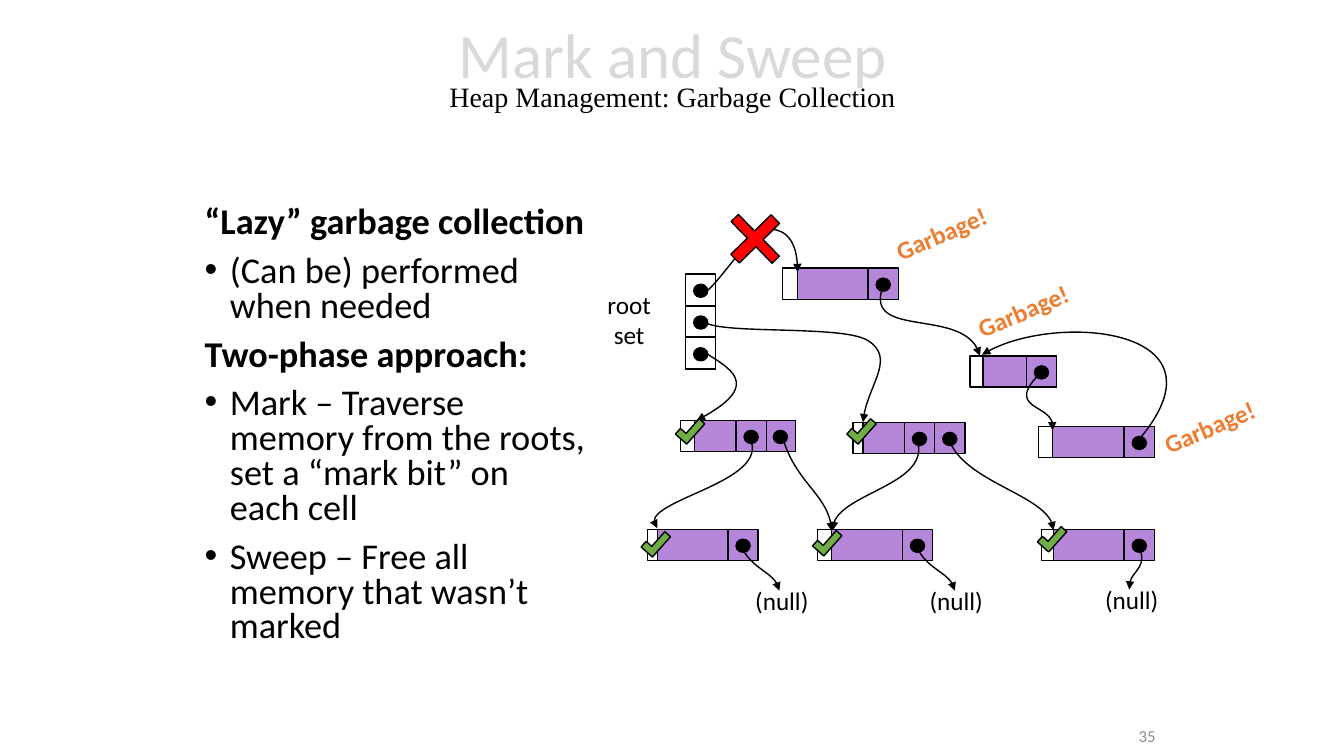
from lxml import etree
from pptx import Presentation
from pptx.dml.color import RGBColor
from pptx.enum.shapes import MSO_SHAPE
from pptx.enum.text import MSO_ANCHOR, MSO_AUTO_SIZE, PP_ALIGN
from pptx.oxml.ns import qn
from pptx.util import Cm, Pt

RECT, OVAL = MSO_SHAPE.RECTANGLE, MSO_SHAPE.OVAL
PLUS, TICK = MSO_SHAPE.CROSS, MSO_SHAPE.CORNER
LEFT, MID, RIGHT = PP_ALIGN.LEFT, PP_ALIGN.CENTER, PP_ALIGN.RIGHT
TOP, CENTER = MSO_ANCHOR.TOP, MSO_ANCHOR.MIDDLE
FIXED = MSO_AUTO_SIZE.NONE
INCH = 2.54
BLACK, WHITE, PURPLE, GREEN = "000000", "FFFFFF", "B686DA", "70AD47"
RED, ORANGE, PALE, GREY = "FF0000", "ED7D31", "D9D9D9", "8C8C8C"

TITLE = [("Mark and Sweep", "Calibri", 45, PALE),
         ("Heap Management: Garbage Collection", "Times New Roman", 20, BLACK)]
BODY = [("“Lazy” garbage collection", True),
        ("(Can be) performed when needed", False),
        ("Two-phase approach:", True),
        ("Mark – Traverse memory from the roots, set a “mark bit” on each cell", False),
        ("Sweep – Free all memory that wasn’t marked", False)]

ROOT = (6.8, 2.72, 3)
ROW, BOX, DATA = 0.31, 0.3, 0.73
CELLS = [(7.76, 2.66, 0.15, [0.7]), (9.62, 3.53, 0.13, [0.43]),
         (10.3, 4.23, 0.14, [0.71]), (6.75, 4.17, 0.14, [0.41, 0.7]),
         (8.46, 4.19, 0.1, [0.41, 0.71]), (6.42, 5.25, 0.1, [0.7]),
         (8.11, 5.25, 0.14, [0.7]), (10.33, 5.25, 0.12, [0.7])]
CURVES = [
    [(8.77, 2.81), (8.53, 3.37), (9.59, 3.02), (9.72, 3.53)],
    [(6.97, 2.87), (6.97, 3.05), (7.43, 2.31), (7.58, 2.28),
     (7.74, 2.25), (7.92, 2.35), (7.91, 2.7)],
    [(10.33, 3.69), (9.96, 4.05), (10.49, 4), (10.44, 4.27)],
    [(11.28, 4.38), (12.26, 3.25), (10.4, 3.09), (9.74, 3.52)],
    [(6.96, 3.16), (6.97, 3.34), (8.35, 3.21), (8.61, 3.38),
     (8.88, 3.55), (8.59, 3.84), (8.56, 4.19)],
    [(6.98, 3.49), (7.23, 3.65), (7.59, 3.82), (6.91, 4.17)],
    [(7.44, 4.35), (7.64, 4.77), (6.26, 4.98), (6.52, 5.24)],
    [(9.1, 4.37), (9.23, 4.8), (8.24, 4.9), (8.26, 5.26)],
    [(7.76, 4.33), (7.88, 4.77), (8.23, 4.91), (8.25, 5.27)],
    [(9.4, 4.33), (9.53, 4.77), (10.43, 4.91), (10.45, 5.26)],
    [(7.35, 5.42), (7.45, 5.63), (7.71, 5.69), (7.73, 5.86)],
    [(9.09, 5.42), (9.18, 5.63), (9.45, 5.69), (9.47, 5.86)],
    [(11.29, 5.41), (11.39, 5.62), (11.18, 5.68), (11.2, 5.85)]]
TICKS = [(6.71, 4.18), (6.37, 5.3), (8.07, 5.29), (8.41, 4.18), (10.3, 5.25)]
NULLS = [(7.31, 5.8), (9.04, 5.8), (10.78, 5.79)]
TRASH = [(8.76, 2.11), (9.57, 2.88), (11.42, 4.03)]


def dist(val):
    return Cm(val * INCH)


def tint(code):
    return RGBColor.from_string(code)


def apply(item, vals):
    for key, val in vals.items():
        setattr(item, key, val)


def font(run, face, size, color, bold=False):
    apply(run.font, {"name": face, "size": Pt(size), "bold": bold})
    run.font.color.rgb = tint(color)


def edge(shape):
    shape.shadow.inherit = False
    shape.line.color.rgb = tint(BLACK)
    shape.line.width = Pt(1)


def draw(kind, x, y, w, h, fill, turn=0):
    shape = slide.shapes.add_shape(kind, *map(dist, (x, y, w, h)))
    shape.fill.solid()
    shape.fill.fore_color.rgb = tint(fill)
    shape.rotation = turn
    edge(shape)
    return shape


def link(x, y, fill):
    draw(RECT, x, y, BOX, ROW, fill)
    draw(OVAL, x + 0.08, y + 0.1, 0.14, 0.13, BLACK)


def bend(a, b, c, d, t):
    u = 1 - t
    return tuple(u**3 * p + 3 * u * u * t * q + 3 * u * t * t * r + t**3 * s
                 for p, q, r, s in zip(a, b, c, d))


def curve(pts):
    pts = [(dist(x), dist(y)) for x, y in pts]
    spots = [bend(*pts[i:i + 4], n / 20)
             for i in range(0, len(pts) - 1, 3) for n in range(1, 21)]
    form = slide.shapes.build_freeform(*pts[0])
    form.add_line_segments(spots, close=False)
    shape = form.convert_to_shape()
    shape.fill.background()
    edge(shape)
    trace = shape.element.xpath(".//a:path")[0]
    for seg in trace.findall(qn("a:lnTo")):
        trace.remove(seg)
    for i in range(1, len(pts), 3):
        seg = etree.SubElement(trace, qn("a:cubicBezTo"))
        for x, y in pts[i:i + 3]:
            etree.SubElement(seg, qn("a:pt"), x=str(x - shape.left), y=str(y - shape.top))
    line = shape.element.spPr.find(qn("a:ln"))
    etree.SubElement(line, qn("a:tailEnd"), type="triangle")


def label(lines, x, y, w, h, size=18, color=BLACK, bold=False,
          align=MID, anchor=TOP, turn=0, right=0.1):
    box = slide.shapes.add_textbox(*map(dist, (x, y, w, h)))
    box.rotation = turn
    frame = box.text_frame
    apply(frame, {"word_wrap": False, "vertical_anchor": anchor,
                  "margin_right": dist(right)})
    for i, text in enumerate(lines):
        para = frame.add_paragraph() if i else frame.paragraphs[0]
        para.alignment = align
        run = para.add_run()
        run.text = text
        font(run, "Calibri", size, color, bold)


def place(shape, x, y, w, h, anchor):
    apply(shape, dict(zip(("left", "top", "width", "height"), map(dist, (x, y, w, h)))))
    apply(shape.text_frame, {"word_wrap": True, "auto_size": FIXED,
                             "vertical_anchor": anchor})


deck = Presentation()
apply(deck, {"slide_width": dist(13.33), "slide_height": dist(7.5)})
slide = deck.slides.add_slide(deck.slide_layouts[1])
head, body = slide.placeholders

place(head, 1.67, 0.01, 10, 1.45, CENTER)
para = head.text_frame.paragraphs[0]
apply(para, {"alignment": MID, "line_spacing": 0.7})
for i, (text, face, size, color) in enumerate(TITLE):
    if i:
        para.add_line_break()
    run = para.add_run()
    run.text = text
    font(run, face, size, color)

place(body, 1.93, 2, 3.99, 4.76, TOP)
for i, (text, bold) in enumerate(BODY):
    para = body.text_frame.add_paragraph() if i else body.text_frame.paragraphs[0]
    apply(para, {"alignment": LEFT, "line_spacing": 0.8, "space_before": Pt(10)})
    run = para.add_run()
    run.text = text
    font(run, "Calibri", 25.9, BLACK, bold)
    props = para._p.get_or_add_pPr()
    pad = 0 if bold else dist(0.25)
    props.set("marL", str(pad))
    props.set("indent", str(-pad))
    if bold:
        etree.SubElement(props, qn("a:buNone"))
    else:
        etree.SubElement(props, qn("a:buFont"), typeface="Arial")
        etree.SubElement(props, qn("a:buChar"), char="•")

label(["35"], 9.31, 7.1, 2.25, 0.4, 12, GREY, align=RIGHT, anchor=CENTER)

x, y, count = ROOT
for i in range(count):
    link(x, y + i * 0.315, WHITE)
for x, y, mark, links in CELLS:
    draw(RECT, x, y, mark, ROW, WHITE)
    draw(RECT, x + mark, y, DATA, ROW, PURPLE)
    for gap in reversed(links):
        link(x + mark + gap, y, PURPLE)
for pts in CURVES:
    curve(pts)

label(["root", "set"], 5.92, 2.82, 0.64, 0.71)
for x, y in NULLS:
    label(["(null)"], x, y, 0.79, 0.31, anchor=CENTER, right=0)
cross = draw(PLUS, 7.2, 2.09, 0.58, 0.56, RED, 45.5)
cross.adjustments[0] = 0.41
for x, y in TICKS:
    draw(TICK, x, y, 0.27, 0.15, GREEN, 311.7)
for x, y in TRASH:
    label(["Garbage!"], x, y, 1.16, 0.4, color=ORANGE, bold=True, align=LEFT, turn=336.6)

deck.save("out.pptx")
